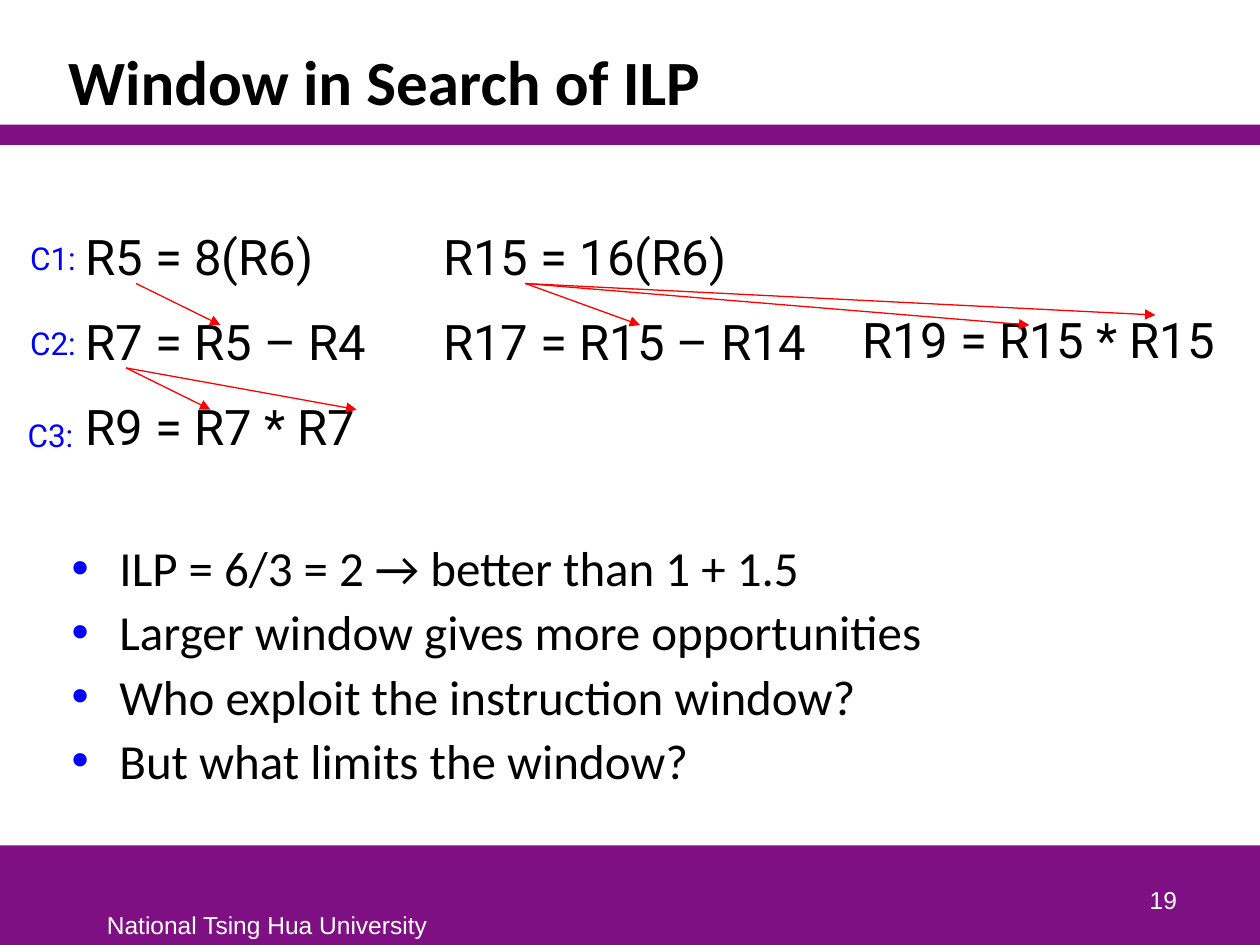
from pptx import Presentation
from pptx.dml.color import RGBColor
from pptx.enum.shapes import MSO_CONNECTOR, MSO_SHAPE
from pptx.enum.text import MSO_ANCHOR, PP_ALIGN
from pptx.oxml.ns import qn
from pptx.util import Inches, Pt
from lxml import etree

PURPLE = RGBColor(0x7F, 0x10, 0x84)
BLACK = RGBColor(0, 0, 0)
WHITE = RGBColor(255, 255, 255)
BLUE = RGBColor(0, 0, 255)
RED = RGBColor(255, 0, 0)
RECTANGLE = MSO_SHAPE.RECTANGLE
STRAIGHT = MSO_CONNECTOR.STRAIGHT
TOP, BOTTOM = MSO_ANCHOR.TOP, MSO_ANCHOR.BOTTOM
LEFT, RIGHT = PP_ALIGN.LEFT, PP_ALIGN.RIGHT

TITLE = {"name": "Calibri", "size": Pt(36), "bold": True}
BODY = {"name": "Calibri", "size": Pt(28)}
CODE = {"name": "Roboto", "size": Pt(28)}
CYCLE = {"name": "Roboto", "size": Pt(18)}
FOOTER = {"name": "Arial", "size": Pt(14)}

ROW_TOP = 1.75
ROW_PITCH = 0.66


class SlideBuilder:
    def __init__(self, slide):
        self.slide = slide

    def place(self, shape, box):
        for name, value in zip(("left", "top", "width", "height"), box):
            setattr(shape, name, Inches(value))

    def band(self, box):
        shape = self.slide.shapes.add_shape(RECTANGLE, *map(Inches, box))
        shape.shadow.inherit = False
        shape.fill.solid()
        shape.fill.fore_color.rgb = PURPLE
        shape.line.fill.background()

    def fill_text(self, frame, lines, style, color, paragraph_format, bullet=False):
        for index, line in enumerate(lines):
            paragraph = frame.paragraphs[0] if index == 0 else frame.add_paragraph()
            paragraph.text = line
            for name, value in paragraph_format.items():
                if index or name != "space_before":
                    setattr(paragraph, name, value)
            if bullet:
                self.bullet(paragraph)
            for name, value in style.items():
                setattr(paragraph.font, name, value)
            paragraph.font.color.rgb = color

    def bullet(self, paragraph):
        properties = paragraph._p.get_or_add_pPr()
        properties.set("marL", str(Inches(0.38)))
        properties.set("indent", str(Inches(-0.38)))
        bullet_color = etree.SubElement(properties, qn("a:buClr"))
        etree.SubElement(bullet_color, qn("a:srgbClr"), val=str(BLUE))
        etree.SubElement(properties, qn("a:buFont"), typeface="Arial")
        etree.SubElement(properties, qn("a:buChar"), char="•")

    def title(self, text, box):
        shape = self.slide.shapes.title
        self.place(shape, box)
        shape.text_frame.vertical_anchor = BOTTOM
        self.fill_text(shape.text_frame, [text], TITLE, BLACK,
                       {"alignment": LEFT, "line_spacing": 0.85})

    def text(self, lines, box, style, color=BLACK, space=0, align=LEFT,
             anchor=TOP, wrap=True, bullet=False):
        frame = self.slide.shapes.add_textbox(*map(Inches, box)).text_frame
        frame.word_wrap = wrap
        frame.vertical_anchor = anchor
        self.fill_text(frame, lines, style, color,
                       {"alignment": align, "space_before": Pt(space)}, bullet)

    def arrow(self, start, end):
        connector = self.slide.shapes.add_connector(
            STRAIGHT, *map(Inches, (*start, *end)))
        connector.line.color.rgb = RED
        connector.line.width = Pt(0.75)
        line = connector.line._get_or_add_ln()
        etree.SubElement(line, qn("a:tailEnd"), type="triangle")
        etree.SubElement(connector._element.spPr, qn("a:effectLst"))


def main():
    presentation = Presentation()
    presentation.slide_width = Inches(10)
    presentation.slide_height = Inches(7.5)
    slide = presentation.slides.add_slide(presentation.slide_layouts[5])
    builder = SlideBuilder(slide)

    builder.band((0, 6.71, 10, 0.79))
    builder.band((0, 0.99, 10, 0.16))
    builder.text(["National Tsing Hua University"], (0.75, 7.17, 2.76, 0.33),
                 FOOTER, WHITE, wrap=False)
    builder.title("Window in Search of ILP", (0.44, 0.25, 8.97, 0.74))
    builder.text(["ILP = 6/3 = 2 → better than 1 + 1.5",
                  "Larger window gives more opportunities",
                  "Who exploit the instruction window?",
                  "But what limits the window?"],
                 (0.47, 4.22, 8.94, 2.36), BODY, space=3, bullet=True)

    columns = [
        (0.58, 0, ["R5 = 8(R6)", "R7 = R5 – R4", "R9 = R7 * R7"]),
        (3.42, 0, ["R15 = 16(R6)", "R17 = R15 – R14"]),
        (6.75, 1, ["R19 = R15 * R15"]),
    ]
    for left, row, lines in columns:
        builder.text(lines, (left, ROW_TOP + row * ROW_PITCH, 3.2,
                             len(lines) * ROW_PITCH), CODE, space=15)

    arrows = {
        (1.08, 2.25): [(1.75, 2.58)],
        (1, 2.92): [(1.67, 3.25), (2.83, 3.25)],
        (4.17, 2.25): [(5.08, 2.58), (9.17, 2.5), (8.17, 2.58)],
    }
    for start, ends in arrows.items():
        for end in ends:
            builder.arrow(start, end)

    for label, left, top in (("C1:", 0.14, 1.85), ("C2:", 0.14, 2.52),
                             ("C3:", 0.12, 3.25)):
        builder.text([label], (left, top, 0.59, 0.4), CYCLE, BLUE, wrap=False)
    builder.text(["19"], (7.36, 6.81, 2.08, 0.5), FOOTER, WHITE,
                 align=RIGHT, anchor=BOTTOM)
    presentation.save("out.pptx")


if __name__ == "__main__":
    main()
